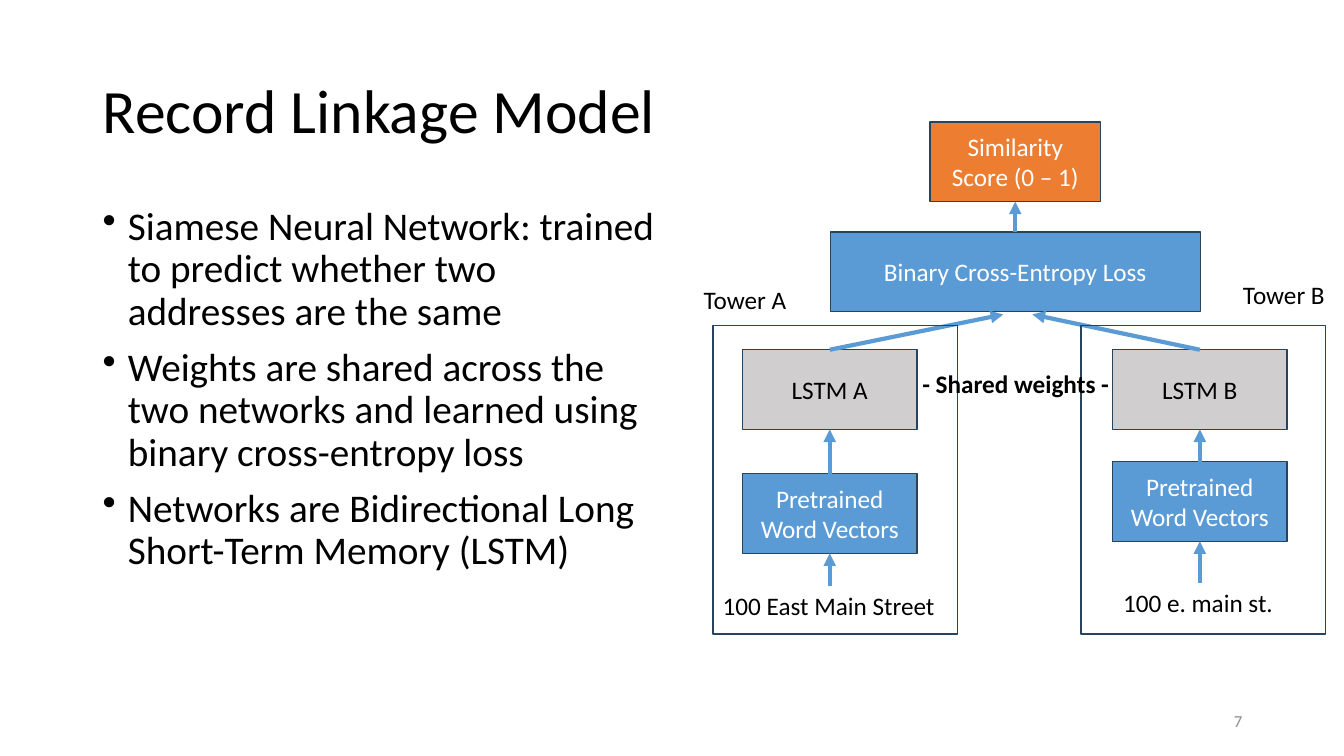
from dataclasses import dataclass
from typing import Optional

import lxml.etree
import pptx
import pptx.dml.color
import pptx.enum.shapes
import pptx.enum.text
import pptx.oxml.ns
import pptx.util

Inches = pptx.util.Inches
ALIGN = pptx.enum.text.PP_ALIGN
ANCHOR = pptx.enum.text.MSO_ANCHOR
COLORS = {
    "black": "000000",
    "white": "FFFFFF",
    "page_number": "8C8C8C",
    "blue": "5B9BD5",
    "orange": "ED7D31",
    "gray": "D0CECE",
    "outline": "28445D",
}
FONT = "Calibri"
BOX_HEIGHT = 0.79
BOX_WIDTH = 1.73
LABEL_HEIGHT = 0.4
LSTM_TOP = 3.47
LOSS_TOP = 2.3
SCORE_TOP = 1.21
NETWORK_CENTER = 10.07


@dataclass(frozen=True)
class Box:
    text: str
    center: float
    top: float
    width: float
    fill: str
    color: str = "white"


@dataclass(frozen=True)
class Label:
    text: str
    left: float
    top: float
    width: float
    bold: bool = False


@dataclass(frozen=True)
class Tower:
    letter: str
    center: float
    frame_left: float
    vectors_top: float
    loss_entry: float
    name_left: float
    name_top: float
    address: str
    address_left: float
    address_top: float
    address_width: float


TOWERS = (
    Tower("A", 8.23, 7.07, 4.7, 9.95, 6.88, 2.77, "100 East Main Street", 7.07, 5.81, 2.33),
    Tower("B", 11.9, 10.72, 4.58, 10.24, 12.23, 2.72, "100 e. main st.", 11.04, 5.78, 1.71),
)
POINTS = (
    "Siamese Neural Network: trained to predict whether two addresses are the same",
    "Weights are shared across the two networks and learned using binary cross-entropy loss",
    "Networks are Bidirectional Long Short-Term Memory (LSTM)",
)


def rgb(name: str) -> pptx.dml.color.RGBColor:
    return pptx.dml.color.RGBColor.from_string(COLORS[name])


def add_bullet(paragraph) -> None:
    properties = paragraph._p.get_or_add_pPr()
    properties.set("marL", str(Inches(0.25)))
    properties.set("indent", str(Inches(-0.25)))
    bullet = lxml.etree.SubElement(properties, pptx.oxml.ns.qn("a:buChar"))
    bullet.set("char", "•")


def write_text(shape, *texts: str, size: float = 18, color: str = "black", bold: bool = False,
               align=ALIGN.LEFT, anchor=ANCHOR.TOP, wrap: bool = True, bullets: bool = False,
               line_spacing: Optional[float] = None, space_before: float = 0) -> None:
    """Fill a shape with one paragraph per text, all in the same format."""
    frame = shape.text_frame
    frame.word_wrap = wrap
    frame.vertical_anchor = anchor
    if not wrap:
        frame.auto_size = pptx.enum.text.MSO_AUTO_SIZE.SHAPE_TO_FIT_TEXT
    for index, text in enumerate(texts):
        paragraph = frame.add_paragraph() if index else frame.paragraphs[0]
        if bullets:
            add_bullet(paragraph)
        paragraph.text = text
        paragraph.alignment = align
        paragraph.line_spacing = line_spacing
        paragraph.space_before = pptx.util.Pt(space_before if index else 0)
        font = paragraph.font
        font.name = FONT
        font.size = pptx.util.Pt(size)
        font.bold = bold
        font.color.rgb = rgb(color)


def add_text_box(slide, left: float, top: float, width: float, height: float):
    return slide.shapes.add_textbox(Inches(left), Inches(top), Inches(width), Inches(height))


def add_rectangle(slide, left: float, top: float, width: float, height: float,
                  fill: Optional[str] = None):
    shape = slide.shapes.add_shape(pptx.enum.shapes.MSO_SHAPE.RECTANGLE, Inches(left),
                                   Inches(top), Inches(width), Inches(height))
    shape.shadow.inherit = False
    if fill:
        shape.fill.solid()
        shape.fill.fore_color.rgb = rgb(fill)
    else:
        shape.fill.background()
    shape.line.color.rgb = rgb("outline")
    shape.line.width = pptx.util.Pt(1)
    return shape


def draw_box(slide, box: Box) -> None:
    shape = add_rectangle(slide, box.center - box.width / 2, box.top, box.width, BOX_HEIGHT,
                          box.fill)
    write_text(shape, box.text, color=box.color, align=ALIGN.CENTER, anchor=ANCHOR.MIDDLE)


def draw_label(slide, label: Label) -> None:
    shape = add_text_box(slide, label.left, label.top, label.width, LABEL_HEIGHT)
    write_text(shape, label.text, bold=label.bold, wrap=False)


def draw_arrow(slide, start_x: float, start_y: float, end_x: float, end_y: float) -> None:
    connector = slide.shapes.add_connector(pptx.enum.shapes.MSO_CONNECTOR.STRAIGHT,
                                           Inches(start_x), Inches(start_y),
                                           Inches(end_x), Inches(end_y))
    connector.line.color.rgb = rgb("blue")
    connector.line.width = pptx.util.Pt(3)
    qn = pptx.oxml.ns.qn
    lxml.etree.SubElement(connector.line._get_or_add_ln(), qn("a:tailEnd")).set("type", "triangle")
    lxml.etree.SubElement(connector._element.spPr, qn("a:effectLst"))


def draw_tower(slide, tower: Tower) -> None:
    center = tower.center
    draw_box(slide, Box(f"LSTM {tower.letter}", center, LSTM_TOP, BOX_WIDTH, "gray", "black"))
    draw_box(slide, Box("Pretrained Word Vectors", center, tower.vectors_top, BOX_WIDTH, "blue"))
    draw_label(slide, Label(tower.address, tower.address_left, tower.address_top,
                            tower.address_width))
    draw_arrow(slide, center, tower.address_top, center, tower.vectors_top + BOX_HEIGHT)
    draw_arrow(slide, center, tower.vectors_top, center, LSTM_TOP + BOX_HEIGHT)
    draw_arrow(slide, center, LSTM_TOP, tower.loss_entry, 3.12)
    add_rectangle(slide, tower.frame_left, 3.23, 2.43, 3.06)
    draw_label(slide, Label(f"Tower {tower.letter}", tower.name_left, tower.name_top, 1.03))


def main() -> None:
    presentation = pptx.Presentation()
    presentation.slide_width = Inches(13.33)
    presentation.slide_height = Inches(7.5)
    slide = presentation.slides.add_slide(presentation.slide_layouts[6])

    write_text(add_text_box(slide, 0.92, 0.4, 11.5, 1.45), "Record Linkage Model",
               size=44, anchor=ANCHOR.MIDDLE, line_spacing=0.9)
    write_text(add_text_box(slide, 0.92, 2, 5.75, 4.36), *POINTS,
               size=28, bullets=True, line_spacing=0.9, space_before=10)
    write_text(add_text_box(slide, 9.42, 6.95, 3, 0.4), "7", size=12, color="page_number",
               align=ALIGN.RIGHT, anchor=ANCHOR.MIDDLE)

    draw_box(slide, Box("Similarity Score (0 – 1)", NETWORK_CENTER, SCORE_TOP, 1.69, "orange"))
    draw_box(slide, Box("Binary Cross-Entropy Loss", NETWORK_CENTER, LOSS_TOP, 3.67, "blue"))
    draw_arrow(slide, NETWORK_CENTER, LOSS_TOP, NETWORK_CENTER, SCORE_TOP + BOX_HEIGHT)
    for tower in TOWERS:
        draw_tower(slide, tower)
    draw_label(slide, Label("- Shared weights -", 9.05, 3.61, 2.07, bold=True))

    presentation.save("out.pptx")


if __name__ == "__main__":
    main()
